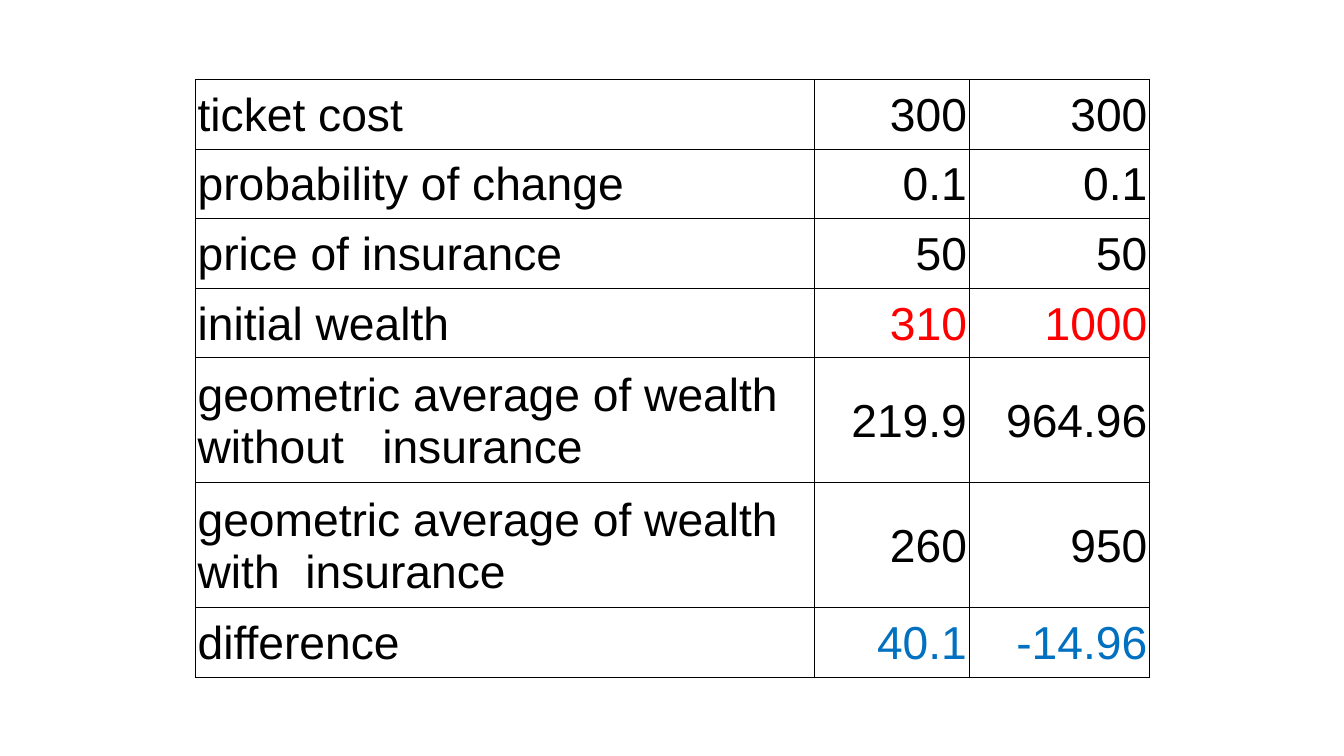
from lxml import etree
from pptx import Presentation
from pptx.dml.color import RGBColor
from pptx.enum import text
from pptx.oxml import parse_xml
from pptx.util import Inches, Pt

BLACK = RGBColor(0x00, 0x00, 0x00)
RED = RGBColor(0xFF, 0x00, 0x00)
BLUE = RGBColor(0x00, 0x70, 0xC0)
NS = "http://schemas.openxmlformats.org/drawingml/2006/main"

# Label, two scenario values, colour of the values, row height
ROWS = [
    ("ticket cost", "300", "300", BLACK, 0.69),
    ("probability of change", "0.1", "0.1", BLACK, 0.69),
    ("price of insurance", "50", "50", BLACK, 0.69),
    ("initial wealth", "310", "1000", RED, 0.69),
    ("geometric average of wealth without   insurance", "219.9", "964.96", BLACK, 1.24),
    ("geometric average of wealth with  insurance", "260", "950", BLACK, 1.24),
    ("difference", "40.1", "-14.96", BLUE, 0.69),
]
COLS = [6.14, 1.53, 1.79]
CELL = {
    "margin_left": Inches(0.02),
    "margin_right": Inches(0.02),
    "margin_top": Inches(0.02),
    "margin_bottom": 0,
    "vertical_anchor": text.MSO_ANCHOR.MIDDLE,
}


def add_borders(cell):
    """Draw a thin black line on all four sides of a cell."""
    tcPr = cell._tc.get_or_add_tcPr()
    for i, side in enumerate("LRTB"):
        tcPr.insert(i, parse_xml(
            f'<a:ln{side} xmlns:a="{NS}" w="{Pt(0.5)}"><a:solidFill>'
            f'<a:srgbClr val="{BLACK}"/></a:solidFill></a:ln{side}>'))


prs = Presentation()
prs.slide_width, prs.slide_height = Inches(13.33), Inches(7.5)
s = prs.slides.add_slide(prs.slide_layouts[6])

# Table frame, without the banded style
table = s.shapes.add_table(
    len(ROWS), len(COLS), Inches(1.94), Inches(0.79),
    Inches(sum(COLS)), Inches(sum(row[-1] for row in ROWS))).table
table.first_row = table.horz_banding = False
for col, width in zip(table.columns, COLS):
    col.width = Inches(width)

# Cells: labels on the left, values right-aligned
for r, (*words, value_color, height) in enumerate(ROWS):
    table.rows[r].height = Inches(height)
    for c, word in enumerate(words):
        cell = table.cell(r, c)
        for name, value in CELL.items():
            setattr(cell, name, value)
        cell.fill.background()
        add_borders(cell)
        p = cell.text_frame.paragraphs[0]
        p.alignment = text.PP_ALIGN.RIGHT if c else text.PP_ALIGN.LEFT
        run = p.add_run()
        run.text = word
        run.font.name, run.font.size = "Arial", Pt(33)
        run.font.color.rgb = value_color if c else BLACK

prs.save("out.pptx")
